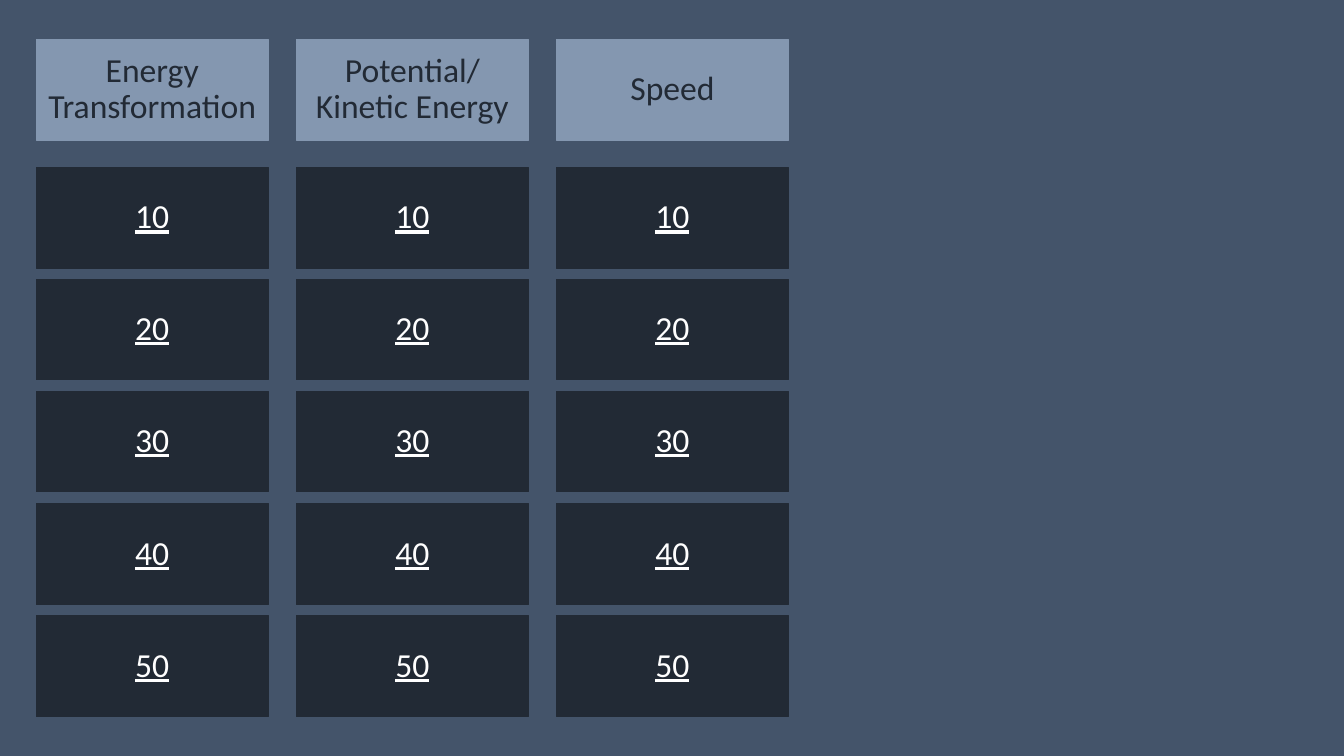
from dataclasses import dataclass

from pptx import Presentation
from pptx.dml.color import RGBColor
from pptx.enum.shapes import MSO_SHAPE
from pptx.enum.text import MSO_ANCHOR, PP_ALIGN
from pptx.slide import Slide
from pptx.util import Emu, Pt

EMU_PER_PX = 9144  # 100 px to the inch

COLOURS = {
    "background": "44546A",
    "header": "8497B0",
    "dark": "222A35",
    "white": "FFFFFF",
}

CATEGORIES = ["Energy Transformation", "Potential/ Kinetic Energy", "Speed"]
POINTS = [10, 20, 30, 40, 50]

BOARD_LEFT, COLUMN_STEP = 36, 258
HEADER_TOP, POINTS_TOP, ROW_STEP = 39, 166, 111.25
TILE_WIDTH, TILE_HEIGHT = 230, 100

PARAGRAPH_FORMAT = {"alignment": PP_ALIGN.CENTER, "line_spacing": 0.9}
FONT_FORMAT = {"name": "Calibri", "size": Pt(24)}


@dataclass(frozen=True)
class TileStyle:
    fill: str
    text: str
    underline: bool


HEADER_STYLE = TileStyle("header", "dark", False)
POINTS_STYLE = TileStyle("dark", "white", True)


@dataclass(frozen=True)
class Tile:
    text: str
    left: int
    top: int
    style: TileStyle


def px(length: int) -> Emu:
    return Emu(length * EMU_PER_PX)


def colour(name: str) -> RGBColor:
    return RGBColor.from_string(COLOURS[name])


def set_attributes(target: object, values: dict) -> None:
    for name, value in values.items():
        setattr(target, name, value)


def add_tile(page: Slide, tile: Tile) -> None:
    box = page.shapes.add_shape(
        MSO_SHAPE.RECTANGLE, px(tile.left), px(tile.top), px(TILE_WIDTH), px(TILE_HEIGHT)
    )
    box.shadow.inherit = False
    box.fill.solid()
    box.fill.fore_color.rgb = colour(tile.style.fill)
    box.line.color.rgb = colour(tile.style.fill)
    box.line.width = Pt(0.75)

    frame = box.text_frame
    set_attributes(frame, {"word_wrap": True, "vertical_anchor": MSO_ANCHOR.MIDDLE})
    para = frame.paragraphs[0]
    set_attributes(para, PARAGRAPH_FORMAT)
    span = para.add_run()
    span.text = tile.text
    set_attributes(span.font, FONT_FORMAT | {"underline": tile.style.underline})
    span.font.color.rgb = colour(tile.style.text)


def board_tiles() -> list[Tile]:
    tiles = []
    for column, category in enumerate(CATEGORIES):
        left = BOARD_LEFT + column * COLUMN_STEP
        tiles.append(Tile(category, left, HEADER_TOP, HEADER_STYLE))
        for row, points in enumerate(POINTS):
            top = POINTS_TOP + round(row * ROW_STEP)
            tiles.append(Tile(str(points), left, top, POINTS_STYLE))
    return tiles


def main() -> None:
    # Deck and background
    deck = Presentation()
    set_attributes(deck, {"slide_width": px(1333), "slide_height": px(750)})
    page = deck.slides.add_slide(deck.slide_layouts.get_by_name("Blank"))
    page.background.fill.solid()
    page.background.fill.fore_color.rgb = colour("background")

    # Game board
    for tile in board_tiles():
        add_tile(page, tile)

    deck.save("out.pptx")


if __name__ == "__main__":
    main()
